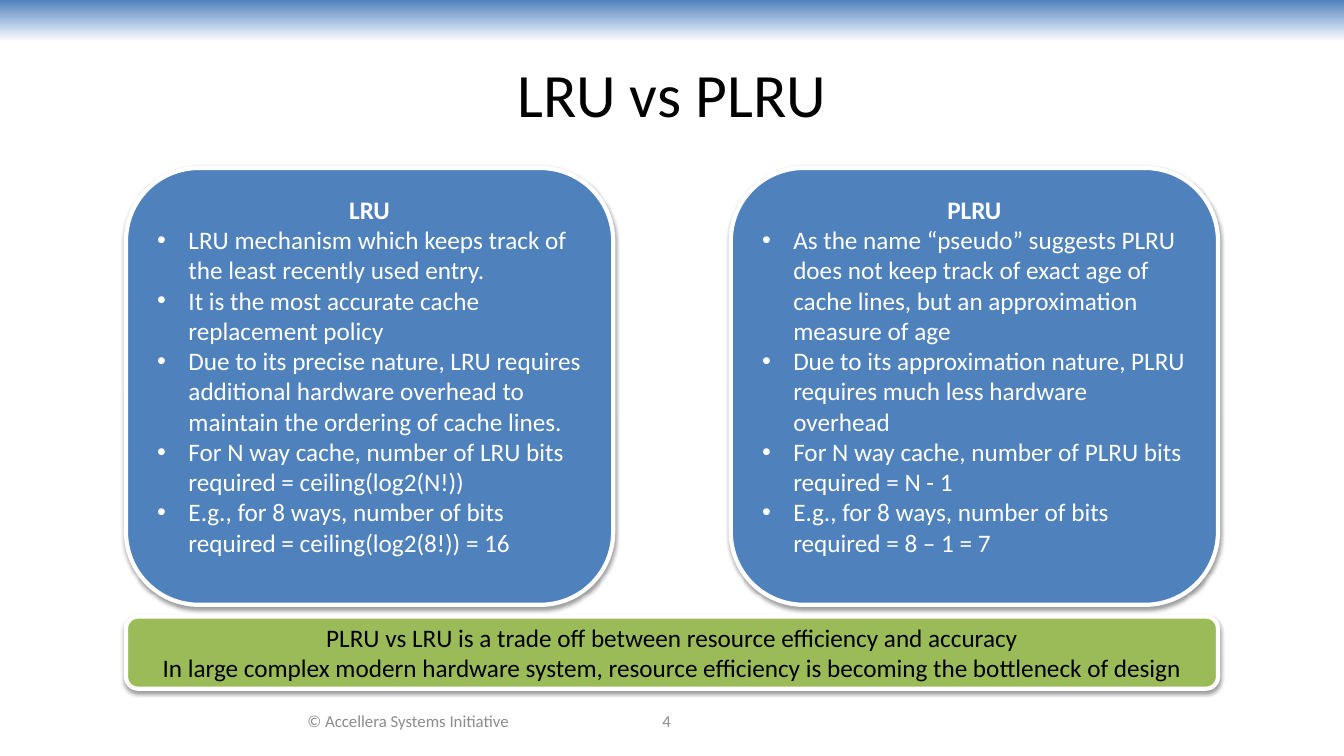
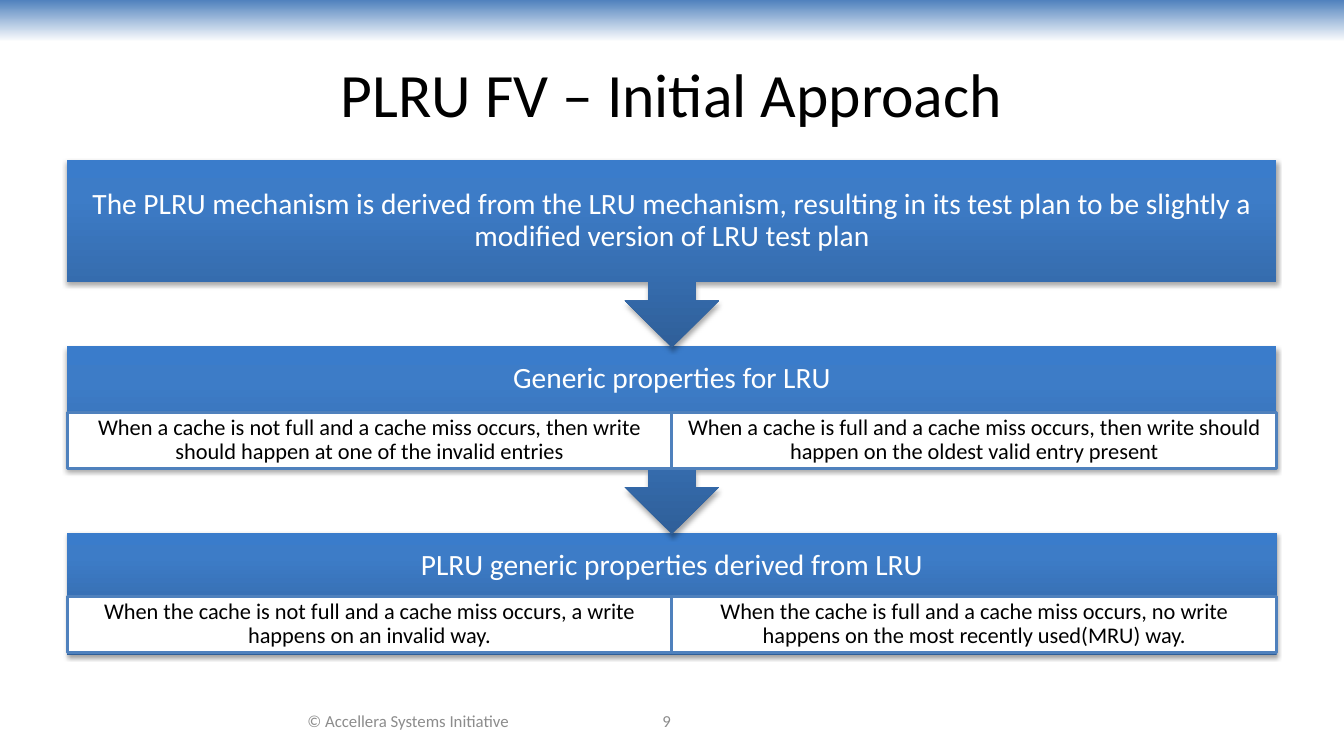
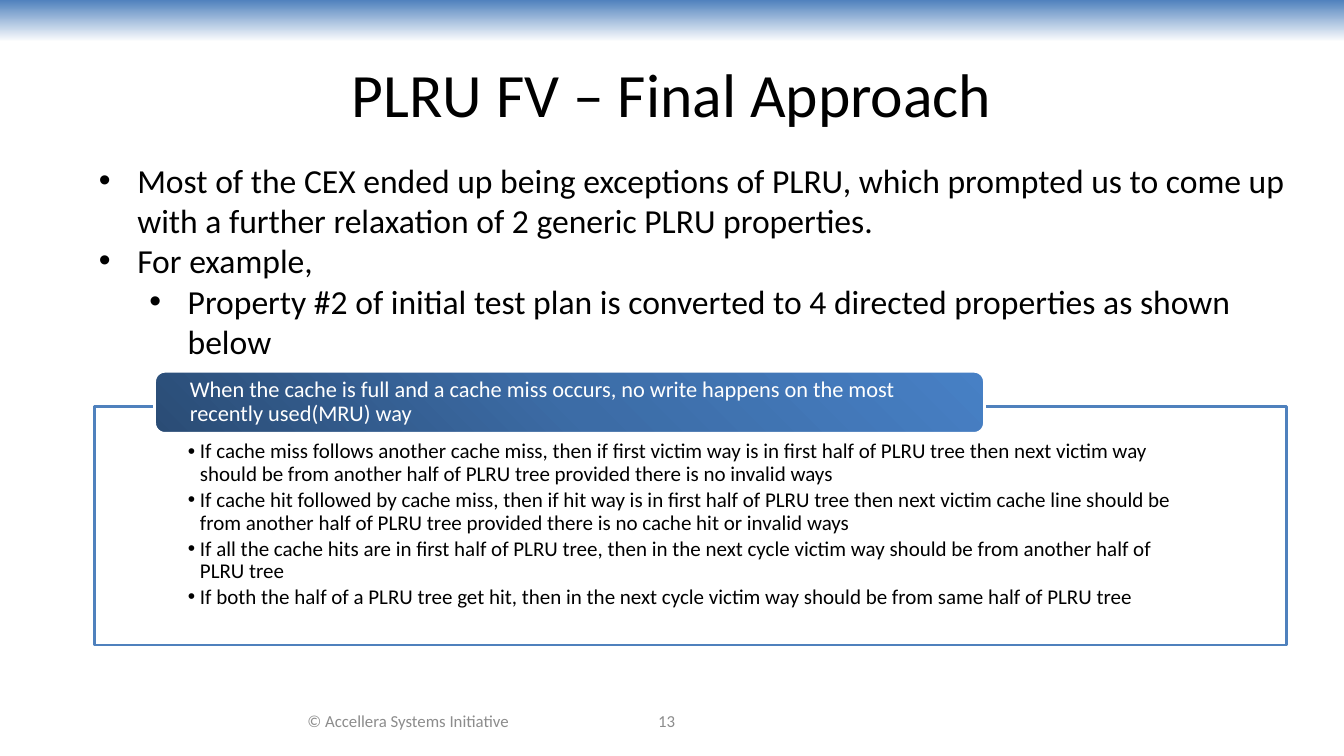
from lxml.etree import SubElement
from pptx import Presentation
from pptx.dml.color import RGBColor
from pptx.enum.shapes import MSO_SHAPE
from pptx.enum.text import MSO_ANCHOR, PP_ALIGN
from pptx.oxml.ns import qn
from pptx.util import Inches, Pt

# The slide is a grid of 160 columns by 90 rows of square cells.
COLUMNS, ROWS = 160, 90
CELL = Inches(1) / 12
MARGIN = 8
CONTENT_WIDTH = COLUMNS - 2 * MARGIN

FONT = "Calibri"
BLUE, GREEN, GREY = "4F81BD", "9BBB59", "8C8C8C"
WHITE, BLACK = "FFFFFF", "000000"
STEP_STOPS = [(0, "2F5F99"), (80, "3D7CC7"), (100, "3A7CCB")]
LABEL_STOPS = [(0, "2A4C75"), (50, "3C6CA6"), (100, "4780C5")]


def color(value):
    return RGBColor.from_string(value)


def cells(*counts):
    return [round(count * CELL) for count in counts]


def set_gradient(shape, stops, angle):
    """Fill with (percent, colour) stops; the angle runs clockwise from the left."""
    shape.fill.gradient()
    shape.fill.gradient_angle = 360 - angle
    stop_list = shape.element.spPr.find(".//" + qn("a:gsLst"))
    for old_stop in list(stop_list):
        stop_list.remove(old_stop)
    for percent, value in stops:
        stop = SubElement(stop_list, qn("a:gs"), pos=str(percent * 1000))
        SubElement(stop, qn("a:srgbClr"), val=value)


def set_shadow(shape, alpha, distance):
    effects = shape.element.spPr.find(qn("a:effectLst"))
    outer = SubElement(effects, qn("a:outerShdw"), blurRad=str(Pt(3.1)),
                       dist=str(Pt(distance)), dir="5400000", rotWithShape="0")
    black = SubElement(outer, qn("a:srgbClr"), val=BLACK)
    SubElement(black, qn("a:alpha"), val=str(alpha * 1000))


def add_box(page, kind, place, fill=None, line=None, width=2):
    box = page.shapes.add_shape(kind, *cells(*place))
    box.shadow.inherit = False
    if fill:
        box.fill.solid()
        box.fill.fore_color.rgb = color(fill)
    if line:
        box.line.color.rgb = color(line)
        box.line.width = Pt(width)
    else:
        box.line.fill.background()
    return box


def set_frame(box, anchor=MSO_ANCHOR.MIDDLE, insets=(0.1, 0.05, 0.1, 0.05)):
    """Set the anchor and the left, top, right and bottom insets in inches."""
    frame = box.text_frame
    frame.word_wrap = True
    frame.vertical_anchor = anchor
    (frame.margin_left, frame.margin_top,
     frame.margin_right, frame.margin_bottom) = map(Inches, insets)
    return frame


def add_bullet(para, left, hanging):
    properties = para._p.get_or_add_pPr()
    properties.set("marL", str(Inches(left)))
    properties.set("indent", str(-Inches(hanging)))
    SubElement(properties, qn("a:buFont"), typeface="Arial")
    SubElement(properties, qn("a:buChar"), char="•")


def write(frame, *texts, size=18, ink=BLACK, bold=False, align=PP_ALIGN.CENTER,
          bullet=None, spacing=None, after=None):
    """Add one paragraph per text; bullet is a (left, hanging) pair in inches."""
    for text in texts:
        first = frame.paragraphs[0]
        para = frame.add_paragraph() if first.runs else first
        if bullet:
            add_bullet(para, *bullet)
        para.alignment = align
        if spacing:
            para.line_spacing = spacing
        if after:
            para.space_after = Pt(after)
        span = para.add_run()
        span.text = text
        span.font.name = FONT
        span.font.size = Pt(size)
        span.font.bold = bold
        span.font.color.rgb = color(ink)


def add_text_box(page, place, anchor=MSO_ANCHOR.MIDDLE):
    return set_frame(page.shapes.add_textbox(*cells(*place)), anchor)


def add_page(deck, title, number):
    page = deck.slides.add_slide(deck.slide_layouts[5])
    heading = page.shapes.title
    heading.left, heading.top, heading.width, heading.height = cells(
        MARGIN, 3.6, CONTENT_WIDTH, 15)
    write(set_frame(heading), title, size=44)
    write(add_text_box(page, (29.3, 83.4, 38.6, 4.8)),
          "© Accellera Systems Initiative", size=12, ink=GREY)
    write(add_text_box(page, (64, 83.4, 30.7, 4.8)), str(number), size=12, ink=GREY)
    return page


def move_band_to_layout(page):
    """Draw the top band once and hand it to the layout all pages share."""
    band = add_box(page, MSO_SHAPE.RECTANGLE, (0, 0, COLUMNS, 5))
    set_gradient(band, [(0, BLUE), (100, WHITE)], 90)
    page.slide_layout.shapes.element.insert(2, band.element)


def add_card(page, place, fill):
    card = add_box(page, MSO_SHAPE.ROUNDED_RECTANGLE, place, fill, WHITE, 3)
    set_shadow(card, 38, 1.6)
    return card


def add_panel(page, column, heading, points):
    panel = add_card(page, (column, 20, 58, 52), BLUE)
    frame = set_frame(panel, MSO_ANCHOR.TOP)
    write(frame, heading, ink=WHITE, bold=True)
    write(frame, *points, ink=WHITE, align=PP_ALIGN.LEFT, bullet=(0.31, 0.31))


def add_step(page, kind, row, height, text, bottom_inset):
    step = add_box(page, kind, (MARGIN, row, CONTENT_WIDTH, height))
    set_gradient(step, STEP_STOPS, 270)
    set_shadow(step, 35, 1.8)
    frame = set_frame(step, insets=(0.16, 0.16, 0.16, bottom_inset))
    write(frame, text, size=21, ink=WHITE, spacing=0.9)


def add_property_row(page, row, properties):
    width = CONTENT_WIDTH / len(properties)
    for index, text in enumerate(properties):
        box = add_box(page, MSO_SHAPE.RECTANGLE,
                      (MARGIN + index * width, row, width, 6.7), WHITE, BLUE)
        write(set_frame(box, insets=(0.12, 0.02, 0.12, 0.02)), text,
              size=16, spacing=0.9)


def build_comparison(deck):
    page = add_page(deck, "LRU vs PLRU", 4)
    add_panel(page, 15, "LRU", [
        "LRU mechanism which keeps track of the least recently used entry.",
        "It is the most accurate cache replacement policy",
        "Due to its precise nature, LRU requires additional hardware overhead to "
        "maintain the ordering of cache lines.",
        "For N way cache, number of LRU bits required = ceiling(log2(N!))",
        "E.g., for 8 ways, number of bits required = ceiling(log2(8!)) = 16",
    ])
    add_panel(page, 87, "PLRU", [
        "As the name “pseudo” suggests PLRU does not keep track of exact age of "
        "cache lines, but an approximation measure of age",
        "Due to its approximation nature, PLRU requires much less hardware overhead",
        "For N way cache, number of PLRU bits required = N - 1",
        "E.g., for 8 ways, number of bits required = 8 – 1 = 7",
    ])
    summary = add_card(page, (15, 73.4, 130, 8.6), GREEN)
    write(set_frame(summary),
          "PLRU vs LRU is a trade off between resource efficiency and accuracy",
          "In large complex modern hardware system, resource efficiency is becoming "
          "the bottleneck of design")
    return page


def build_initial_approach(deck):
    page = add_page(deck, "PLRU FV – Initial Approach", 9)
    callout = MSO_SHAPE.DOWN_ARROW_CALLOUT
    top, pitch, arrow_height = 19, 22.2, 22.4
    # Lower steps come first so that each arrow tip lies over the next step.
    add_step(page, MSO_SHAPE.RECTANGLE, top + 2 * pitch, 14.6,
             "PLRU generic properties derived from LRU", 0.72)
    add_property_row(page, 71, [
        "When the cache is not full and a cache miss occurs, a write happens on an "
        "invalid way.",
        "When the cache is full and a cache miss occurs, no write happens on the "
        "most recently used(MRU) way.",
    ])
    add_step(page, callout, top + pitch, arrow_height,
             "Generic properties for LRU", 0.72)
    add_property_row(page, 49.1, [
        "When a cache is not full and a cache miss occurs, then write should happen "
        "at one of the invalid entries",
        "When a cache is full and a cache miss occurs, then write should happen on "
        "the oldest valid entry present",
    ])
    add_step(page, callout, top, arrow_height,
             "The PLRU mechanism is derived from the LRU mechanism, resulting in its "
             "test plan to be slightly a modified version of LRU test plan", 0.16)


def build_final_approach(deck):
    page = add_page(deck, "PLRU FV – Final Approach", 13)
    intro = add_text_box(page, (10.6, 18.4, 145.3, 25.4), MSO_ANCHOR.TOP)
    write(intro,
          "Most of the CEX ended up being exceptions of PLRU, which prompted us to "
          "come up with a further relaxation of 2 generic PLRU properties.",
          "For example,",
          size=24, align=PP_ALIGN.LEFT, bullet=(0.38, 0.38))
    write(intro,
          "Property #2 of initial test plan is converted to 4 directed properties "
          "as shown below",
          size=24, align=PP_ALIGN.LEFT, bullet=(0.88, 0.38))

    details = add_box(page, MSO_SHAPE.RECTANGLE, (11.2, 48.4, 142, 28.4), WHITE, BLUE)
    write(set_frame(details, MSO_ANCHOR.TOP, (0.93, 0.34, 0.93, 0.12)),
          "If cache miss follows another cache miss, then if first victim way is in "
          "first half of PLRU tree then next victim way should be from another half "
          "of PLRU tree provided there is no invalid ways",
          "If cache hit followed by cache miss, then if hit way is in first half of "
          "PLRU tree then next victim cache line should be from another half of PLRU "
          "tree provided there is no cache hit or invalid ways",
          "If all the cache hits are in first half of PLRU tree, then in the next "
          "cycle victim way should be from another half of PLRU tree",
          "If both the half of a PLRU tree get hit, then in the next cycle victim way "
          "should be from same half of PLRU tree",
          size=15, align=PP_ALIGN.LEFT, bullet=(0.12, 0.12), spacing=0.9, after=2.25)

    label = add_box(page, MSO_SHAPE.ROUNDED_RECTANGLE, (18.4, 44.2, 98.8, 7.4),
                    line=WHITE)
    set_gradient(label, LABEL_STOPS, 315)
    write(set_frame(label, insets=(0.32, 0, 0.32, 0)),
          "When the cache is full and a cache miss occurs, no write happens on the "
          "most recently used(MRU) way",
          size=16, ink=WHITE, align=PP_ALIGN.LEFT, spacing=0.9)


def main():
    deck = Presentation()
    deck.slide_width, deck.slide_height = cells(COLUMNS, ROWS)
    move_band_to_layout(build_comparison(deck))
    build_initial_approach(deck)
    build_final_approach(deck)
    deck.save("out.pptx")


if __name__ == "__main__":
    main()
